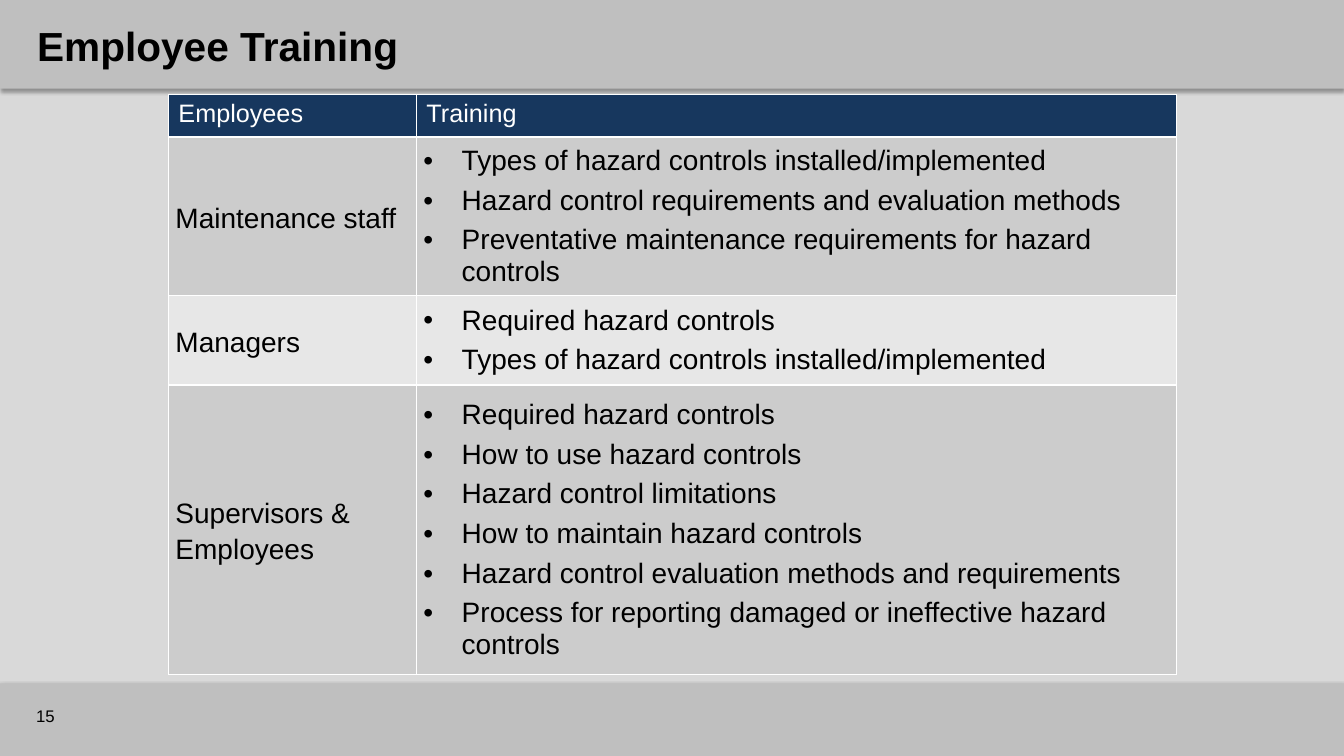
"""Build the employee training slide."""
from lxml import etree
from pptx import Presentation
from pptx.dml.color import RGBColor
from pptx.enum.shapes import MSO_SHAPE
from pptx.enum.text import MSO_ANCHOR
from pptx.oxml.ns import qn
from pptx.util import Inches, Pt

RECTANGLE = MSO_SHAPE.RECTANGLE
MIDDLE = MSO_ANCHOR.MIDDLE
BLACK = RGBColor(0x00, 0x00, 0x00)
WHITE = RGBColor(0xFF, 0xFF, 0xFF)
BACKGROUND = RGBColor(0xD9, 0xD9, 0xD9)
BAND = RGBColor(0xBF, 0xBF, 0xBF)
NAVY = RGBColor(0x17, 0x37, 0x5E)
ROW_FILLS = (RGBColor(0xCC, 0xCC, 0xCC), RGBColor(0xE7, 0xE7, 0xE7))
FONT = "Arial"
COLUMN_WIDTHS = (2.46, 7.54)
ROW_HEIGHTS = (0.42, 1.57, 0.89, 2.87)
HEADINGS = ("Employees", "Training")
TRAINING = (
    ("Maintenance staff", (
        "Types of hazard controls installed/implemented",
        "Hazard control requirements and evaluation methods",
        "Preventative maintenance requirements for hazard controls",
    )),
    ("Managers", (
        "Required hazard controls",
        "Types of hazard controls installed/implemented",
    )),
    ("Supervisors & Employees", (
        "Required hazard controls",
        "How to use hazard controls",
        "Hazard control limitations",
        "How to maintain hazard controls",
        "Hazard control evaluation methods and requirements",
        "Process for reporting damaged or ineffective hazard controls",
    )),
)


def add_element(parent, tag, **attributes):
    """Append a drawing element with the given attributes."""
    element = etree.SubElement(parent, qn(tag))
    for name, value in attributes.items():
        element.set(name, str(value))
    return element


def format_text(text_frame, size, color=BLACK, bold=False):
    """Apply one font to every run of a text frame."""
    for paragraph in text_frame.paragraphs:
        for run in paragraph.runs:
            run.font.name = FONT
            run.font.size = Pt(size)
            run.font.bold = bold
            run.font.color.rgb = color


def add_band(slide, top, height):
    """Add a full-width grey band with a soft shadow."""
    shape = slide.shapes.add_shape(
        RECTANGLE, 0, Inches(top), Inches(13.33), Inches(height))
    shape.fill.solid()
    shape.fill.fore_color.rgb = BAND
    shape.line.fill.background()
    shape.shadow.inherit = False
    effects = shape._element.spPr.find(qn("a:effectLst"))
    shadow = add_element(effects, "a:outerShdw", blurRad=Pt(3.1), dist=Pt(1.8),
                         dir=5400000, rotWithShape=0)
    color = add_element(shadow, "a:srgbClr", val=BLACK)
    add_element(color, "a:alpha", val=35000)


def add_label(slide, text, left, top, width, height, size, bold=False):
    """Add a vertically centred text box."""
    shape = slide.shapes.add_textbox(
        Inches(left), Inches(top), Inches(width), Inches(height))
    text_frame = shape.text_frame
    text_frame.word_wrap = True
    text_frame.vertical_anchor = MIDDLE
    text_frame.text = text
    format_text(text_frame, size, bold=bold)


def style_cell(cell, fill):
    """Give a cell white borders and a solid fill."""
    properties = cell._tc.get_or_add_tcPr()
    for side in "LRTB":
        line = add_element(properties, f"a:ln{side}", w=Pt(1))
        add_element(add_element(line, "a:solidFill"), "a:srgbClr", val=WHITE)
    cell.fill.solid()
    cell.fill.fore_color.rgb = fill


def fill_body_cell(cell, text, fill):
    """Write and style one body cell."""
    cell.text_frame.text = text
    cell.vertical_anchor = MIDDLE
    cell.margin_left = cell.margin_right = Inches(0.07)
    cell.margin_top = cell.margin_bottom = 0
    format_text(cell.text_frame, 20)
    style_cell(cell, fill)


def add_bullets(text_frame):
    """Turn every paragraph into a hanging bullet."""
    for paragraph in text_frame.paragraphs:
        properties = paragraph._p.get_or_add_pPr()
        properties.set("marL", str(Inches(0.38)))
        properties.set("indent", str(-Inches(0.38)))
        add_element(properties, "a:buFont", typeface=FONT)
        add_element(properties, "a:buChar", char="•")
        paragraph.space_after = Pt(6)


def add_training_table(slide):
    """Add the table of employee groups and their training."""
    table = slide.shapes.add_table(
        len(ROW_HEIGHTS), len(COLUMN_WIDTHS), Inches(1.67), Inches(0.94),
        Inches(sum(COLUMN_WIDTHS)), Inches(sum(ROW_HEIGHTS))).table
    for column, width in zip(table.columns, COLUMN_WIDTHS):
        column.width = Inches(width)
    for row, height in zip(table.rows, ROW_HEIGHTS):
        row.height = Inches(height)
    for index, heading in enumerate(HEADINGS):
        cell = table.cell(0, index)
        cell.text_frame.text = heading
        format_text(cell.text_frame, 18, WHITE)
        style_cell(cell, NAVY)
    for index, (group, topics) in enumerate(TRAINING):
        fill = ROW_FILLS[index % 2]
        group_cell = table.cell(index + 1, 0)
        topic_cell = table.cell(index + 1, 1)
        fill_body_cell(group_cell, group, fill)
        group_cell.text_frame.paragraphs[0].line_spacing = 1.15
        fill_body_cell(topic_cell, "\n".join(topics), fill)
        add_bullets(topic_cell.text_frame)


def main():
    """Build and save the slide."""
    presentation = Presentation()
    presentation.slide_width = Inches(13.33)
    presentation.slide_height = Inches(7.5)
    slide = presentation.slides.add_slide(presentation.slide_layouts[6])
    slide.background.fill.solid()
    slide.background.fill.fore_color.rgb = BACKGROUND
    add_band(slide, 6.78, 0.72)
    add_band(slide, 0, 0.88)
    add_label(slide, "Employee Training", 0.27, 0.14, 12.93, 0.62, 29, bold=True)
    add_label(slide, "15", 0.26, 6.9, 1, 0.4, 12)
    add_training_table(slide)
    presentation.save("out.pptx")


if __name__ == "__main__":
    main()
